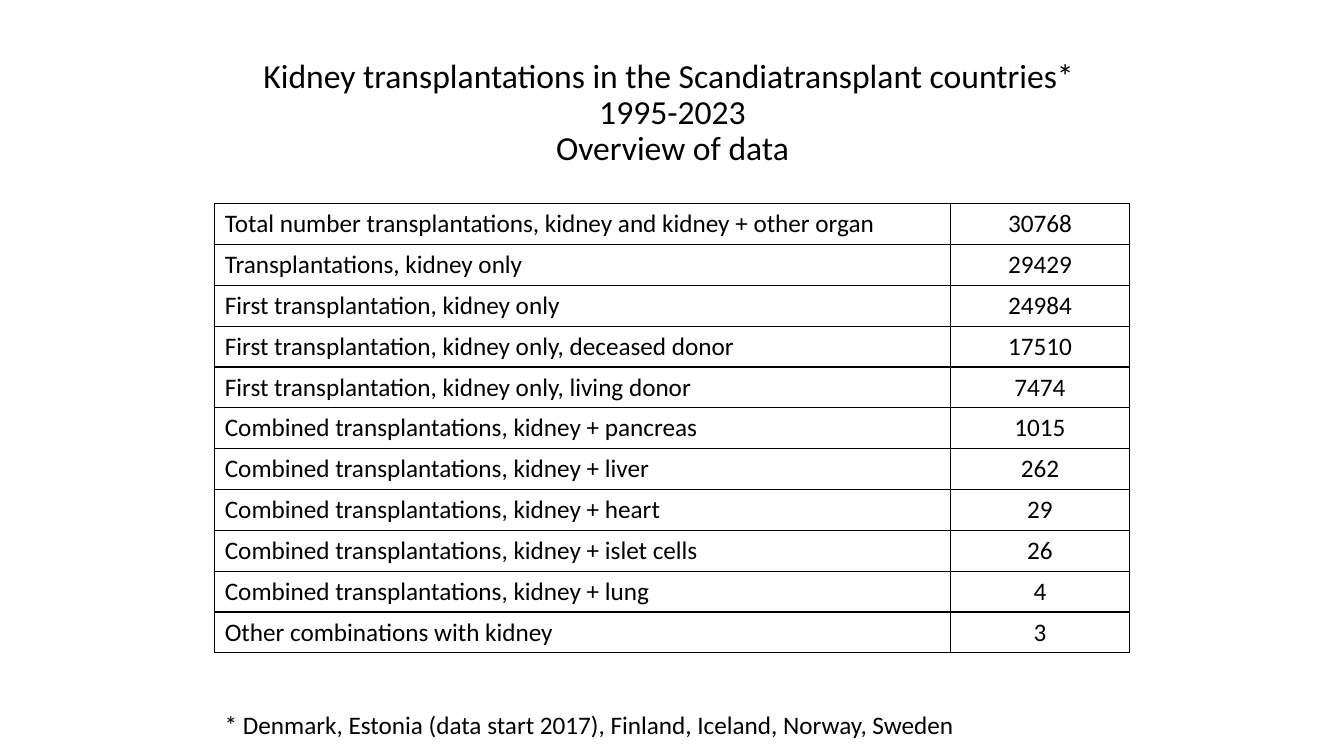
from copy import deepcopy

from pptx import Presentation
from pptx.dml.color import RGBColor
from pptx.enum.text import MSO_ANCHOR, MSO_AUTO_SIZE, PP_ALIGN
from pptx.oxml import parse_xml
from pptx.oxml.ns import nsdecls, qn
from pptx.util import Inches, Pt

BLACK = "000000"
TABLE_LEFT = 2.13
ROW_HEIGHT = 4.46 / 11

transplant_counts = [
    ("Total number transplantations, kidney and kidney + other organ", 30768),
    ("Transplantations, kidney only", 29429),
    ("First transplantation, kidney only", 24984),
    ("First transplantation, kidney only, deceased donor", 17510),
    ("First transplantation, kidney only, living donor", 7474),
    ("Combined transplantations, kidney + pancreas", 1015),
    ("Combined transplantations, kidney + liver", 262),
    ("Combined transplantations, kidney + heart", 29),
    ("Combined transplantations, kidney + islet cells", 26),
    ("Combined transplantations, kidney + lung", 4),
    ("Other combinations with kidney", 3),
]


def write_text(text_frame, text, size=18, color=BLACK, align=PP_ALIGN.LEFT, spacing=1.0):
    paragraph = text_frame.paragraphs[0]
    paragraph.text = text
    paragraph.alignment = align
    paragraph.line_spacing = spacing
    for run in paragraph.runs:
        run.font.name = "Calibri"
        run.font.size = Pt(size)
        run.font.color.rgb = RGBColor.from_string(color)
    # Line breaks take the same format as the runs
    for line_break in paragraph._p.findall(qn("a:br")):
        line_break.append(deepcopy(paragraph.runs[0].font._element))


def add_borders(cell, color=BLACK, width=1):
    for side in ("lnL", "lnR", "lnT", "lnB"):
        cell._tc.get_or_add_tcPr().append(parse_xml(
            f'<a:{side} {nsdecls("a")} w="{Pt(width)}"><a:solidFill>'
            f'<a:srgbClr val="{color}"/></a:solidFill></a:{side}>'))


presentation = Presentation()
presentation.slide_width = Inches(13.33)
presentation.slide_height = Inches(7.5)
slide = presentation.slides.add_slide(presentation.slide_layouts[5])

# Title
title = slide.shapes.title
title.left, title.top = Inches(0.92), Inches(0.4)
title.width, title.height = Inches(11.5), Inches(1.45)
title.text_frame.vertical_anchor = MSO_ANCHOR.MIDDLE
title.text_frame.auto_size = MSO_AUTO_SIZE.NONE
write_text(
    title.text_frame,
    "Kidney transplantations in the Scandiatransplant countries* \n1995-2023\nOverview of data",
    size=24, align=PP_ALIGN.CENTER, spacing=0.9)

# Footnote on the countries
footnote = slide.shapes.add_textbox(
    Inches(TABLE_LEFT), Inches(6.99), Inches(7.52), Inches(0.4))
footnote.text_frame.word_wrap = False
footnote.text_frame.auto_size = MSO_AUTO_SIZE.SHAPE_TO_FIT_TEXT
write_text(footnote.text_frame,
           "* Denmark, Estonia (data start 2017), Finland, Iceland, Norway, Sweden")

# Table of transplantation counts
table = slide.shapes.add_table(
    len(transplant_counts), 2, Inches(TABLE_LEFT), Inches(2.02),
    Inches(9.07), Inches(ROW_HEIGHT * len(transplant_counts))).table
table.first_row = False
table.horz_banding = False
table.columns[0].width = Inches(7.3)
table.columns[1].width = Inches(1.77)

for row_index, (label, count) in enumerate(transplant_counts):
    table.rows[row_index].height = Inches(ROW_HEIGHT)
    for column_index, (text, align) in enumerate(
            [(label, PP_ALIGN.LEFT), (str(count), PP_ALIGN.CENTER)]):
        cell = table.cell(row_index, column_index)
        add_borders(cell)
        cell.fill.background()
        write_text(cell.text_frame, text, align=align)

presentation.save("out.pptx")
